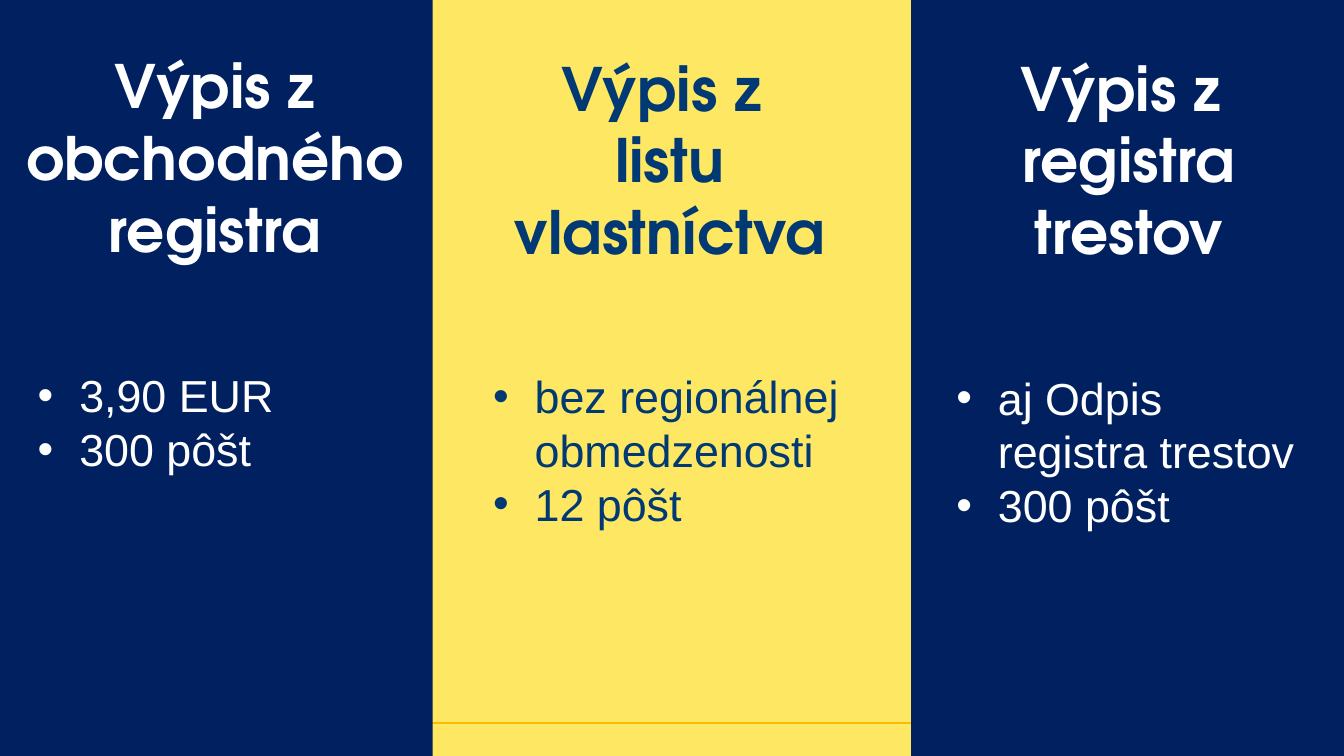
from dataclasses import dataclass

from lxml import etree
from pptx import Presentation
from pptx.dml.color import RGBColor
from pptx.enum.shapes import MSO_CONNECTOR, MSO_SHAPE
from pptx.enum.text import MSO_ANCHOR, MSO_AUTO_SIZE, PP_ALIGN
from pptx.oxml.ns import qn
from pptx.util import Inches, Pt

RECT = MSO_SHAPE.RECTANGLE
LINE = MSO_CONNECTOR.STRAIGHT
TOP = MSO_ANCHOR.TOP
FIXED = MSO_AUTO_SIZE.NONE
LEFT, MID = PP_ALIGN.LEFT, PP_ALIGN.CENTER
WIDE = 10
HIGH = WIDE * 9 / 16
GRID = 100
SIDE = 32.2


@dataclass(frozen=True)
class Theme:
    back: str = "FDE763"
    navy: str = "002060"
    ink: str = "003973"
    white: str = "FFFFFF"
    gold: str = "FABB00"
    head: tuple = ("TeX Gyre Adventor", 32, True)
    list: tuple = ("Arial", 24, False)


class Deck:
    def __init__(self, theme):
        self.theme = theme
        self.file = Presentation()
        self.file.slide_width = Inches(WIDE)
        self.file.slide_height = Inches(HIGH)
        self.slide = self.file.slides.add_slide(self.file.slide_layouts[4])
        self.shapes = self.slide.shapes
        self.spots = {s.placeholder_format.idx: s for s in self.slide.placeholders}
        self.paint(self.slide.background.fill, theme.back)

    def paint(self, fill, tone):
        fill.solid()
        fill.fore_color.rgb = RGBColor.from_string(tone)

    def size(self, x, y, w, h):
        col, row = WIDE / GRID, HIGH / GRID
        return Inches(x * col), Inches(y * row), Inches(w * col), Inches(h * row)

    def rule(self, x, y, w):
        left, top, width, _ = self.size(x, y, w, 0)
        line = self.shapes.add_connector(LINE, left, top, left + width, top)
        line.line.width = Pt(1)
        line.line.color.rgb = RGBColor.from_string(self.theme.gold)
        etree.SubElement(line._element.spPr, qn("a:effectLst"))

    def panel(self, x, w):
        box = self.shapes.add_shape(RECT, *self.size(x, 0, w, GRID))
        box.shadow.inherit = False
        self.paint(box.fill, self.theme.navy)
        box.line.fill.background()

    def text(self, spot, place, rows, style, tone, align):
        area = self.size(*place)
        box = self.spots.get(spot) or self.shapes.add_textbox(*area)
        box.left, box.top, box.width, box.height = area
        self.shapes._spTree.append(box._element)
        frame = box.text_frame
        frame.text = "\n".join(rows)
        form = {"word_wrap": True, "auto_size": FIXED, "vertical_anchor": TOP}
        for key, value in form.items():
            setattr(frame, key, value)
        name, points, bold = style
        look = {"name": name, "size": Pt(points), "bold": bold}
        flow = {"alignment": align, "line_spacing": 1.0,
                "space_before": Pt(0), "space_after": Pt(0)}
        for par in frame.paragraphs:
            for key, value in flow.items():
                setattr(par, key, value)
            for run in par.runs:
                for key, value in look.items():
                    setattr(run.font, key, value)
                run.font.color.rgb = RGBColor.from_string(tone)
        return frame

    def head(self, spot, place, rows, tone):
        self.text(spot, place, rows, self.theme.head, tone, MID)

    def list(self, spot, place, rows, tone):
        frame = self.text(spot, place, rows, self.theme.list, tone, LEFT)
        for par in frame.paragraphs:
            props = par._p.get_or_add_pPr()
            props.set("marL", str(Inches(0.31)))
            props.set("indent", str(-Inches(0.31)))
            etree.SubElement(props, qn("a:buFont")).set("typeface", "Arial")
            etree.SubElement(props, qn("a:buChar")).set("char", "•")


def main():
    theme = Theme()
    deck = Deck(theme)
    deck.rule(3.3, 95.6, 93.4)
    for x in (0, GRID - SIDE):
        deck.panel(x, SIDE)
    cols = [
        (theme.white, 1, (0.9, 5.6), ["Výpis z obchodného registra"],
         2, (1.8, 47.8, 28.9, 16.2), ["3,90 EUR", "300 pôšt"]),
        (theme.ink, 0, (34.75, 5.9), ["Výpis z ", "listu vlastníctva"],
         None, (35.7, 47.9, 28.9, 23.3), ["bez regionálnej obmedzenosti", "12 pôšt"]),
        (theme.white, 3, (68.9, 5.9), ["Výpis z ", "registra trestov"],
         4, (70.15, 48.1, 28.9, 23.3), ["aj Odpis registra trestov", "300 pôšt"]),
    ]
    for tone, top, spot, head, low, place, rows in cols:
        deck.head(top, (*spot, 30.2, 30.6), head, tone)
        deck.list(low, place, rows, tone)
    deck.file.save("out.pptx")


if __name__ == "__main__":
    main()
